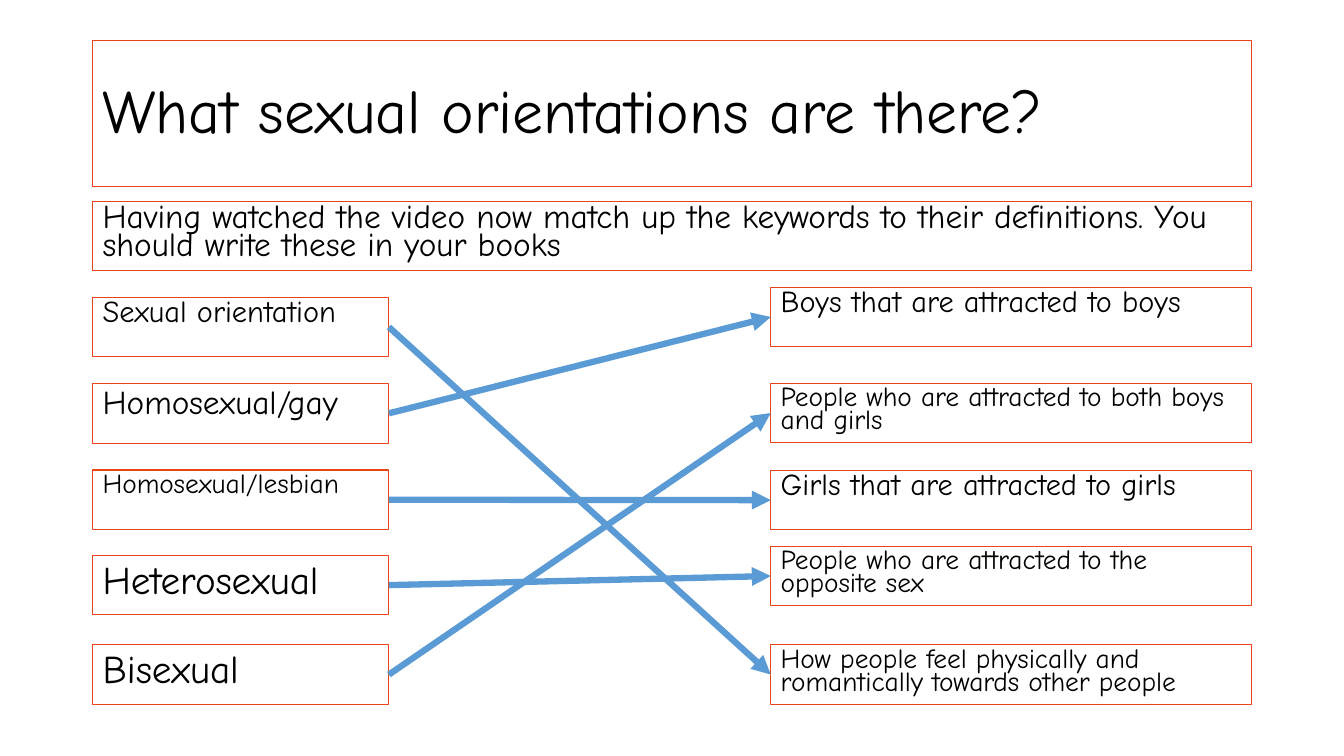
from lxml import etree
from pptx import Presentation
from pptx.dml.color import RGBColor
from pptx.enum import shapes, text
from pptx.oxml.ns import qn
from pptx.util import Pt

BORDER = RGBColor(0xE7, 0x45, 0x19)
ARROW = RGBColor(0x5B, 0x9B, 0xD5)
BLACK = RGBColor(0, 0, 0)
FONT = "Comic Neue"

LEFT, FULL_WIDTH = 66.2, 828
KEYWORD_WIDTH = 211.6
DEFINITION_LEFT, DEFINITION_WIDTH = 550.6, 343.4
BOX_HEIGHT = 42.5
RIGHT_SITE, LEFT_SITE = 3, 1

presentation = Presentation()
presentation.slide_width = Pt(960)
presentation.slide_height = Pt(540)
slide = presentation.slides.add_slide(presentation.slide_layouts[6])


def add_box(words, left, top, width, height, size, line_spacing, space_before=10):
    box = slide.shapes.add_textbox(Pt(left), Pt(top), Pt(width), Pt(height))
    box.line.color.rgb = BORDER
    box.line.width = Pt(0.75)
    frame = box.text_frame
    frame.word_wrap = True
    frame.text = words
    paragraph = frame.paragraphs[0]
    paragraph.line_spacing = line_spacing
    paragraph.space_before = Pt(space_before)
    font = paragraph.runs[0].font
    font.name = FONT
    font.size = Pt(size)
    font.color.rgb = BLACK
    return box


title = add_box("What sexual orientations are there?",
                LEFT, 28.8, FULL_WIDTH, 104.4, 44, 0.9, space_before=0)
title.text_frame.vertical_anchor = text.MSO_ANCHOR.MIDDLE

add_box("Having watched the video now match up the keywords to their definitions. "
        "You should write these in your books",
        LEFT, 144, FULL_WIDTH, 49.5, 23.8, 0.7)

# Words, top, font size, line spacing
keywords = [
    ("Sexual orientation", 212.4, 21.7, 0.7),
    ("Homosexual/gay", 274, 23.8, 0.8),
    ("Homosexual/lesbian", 335.7, 19.6, 0.7),
    ("Heterosexual", 396.7, 28, 0.9),
    ("Bisexual", 460.6, 28, 0.9),
]
# Words, top, font size
definitions = [
    ("Boys that are attracted to boys", 205.2, 21.7),
    ("People who are attracted to both boys and girls", 273.8, 19.6),
    ("Girls that are attracted to girls", 336, 21.7),
    ("People who are attracted to the opposite sex", 390.2, 19.6),
    ("How people feel physically and romantically towards other people", 460.6, 19.6),
]
# Position of each keyword's definition, in keyword order
answers = [4, 0, 2, 3, 1]

keyword_boxes = [
    add_box(words, LEFT, top, KEYWORD_WIDTH, BOX_HEIGHT, size, spacing)
    for words, top, size, spacing in keywords
]
definition_boxes = [
    add_box(words, DEFINITION_LEFT, top, DEFINITION_WIDTH, BOX_HEIGHT, size, 0.7)
    for words, top, size in definitions
]

for keyword_box, answer in zip(keyword_boxes, answers):
    arrow = slide.shapes.add_connector(shapes.MSO_CONNECTOR.STRAIGHT, 0, 0, 0, 0)
    arrow.begin_connect(keyword_box, RIGHT_SITE)
    arrow.end_connect(definition_boxes[answer], LEFT_SITE)
    arrow.line.color.rgb = ARROW
    arrow.line.width = Pt(4.5)
    etree.SubElement(arrow.line._get_or_add_ln(), qn("a:tailEnd"), type="triangle")
    etree.SubElement(arrow._element.spPr, qn("a:effectLst"))

presentation.save("out.pptx")
